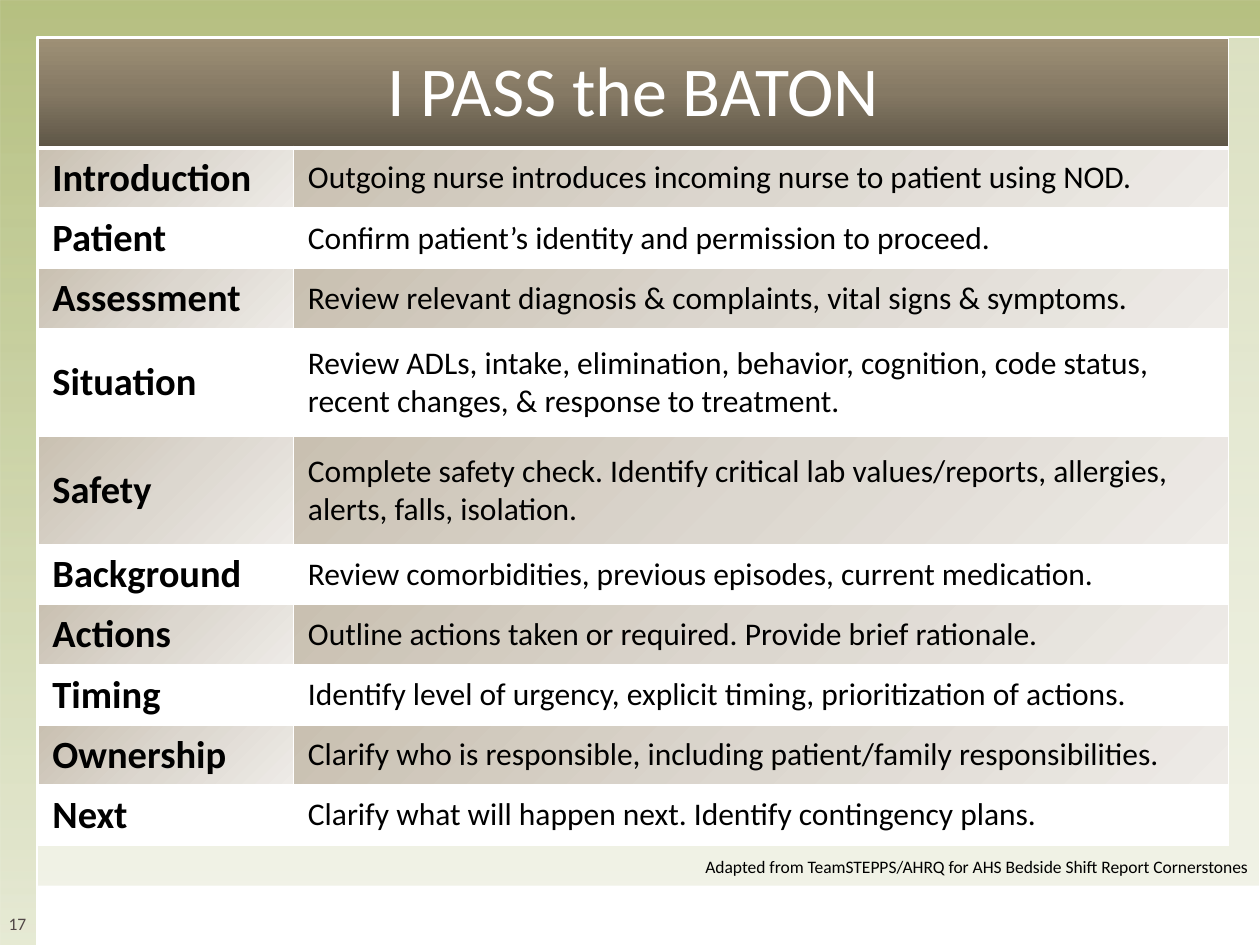
from pptx import Presentation
from pptx.dml.color import RGBColor
from pptx.enum.shapes import MSO_SHAPE
from pptx.enum.text import MSO_ANCHOR, PP_ALIGN
from pptx.oxml import parse_xml
from pptx.oxml.ns import nsdecls, qn
from pptx.util import Pt

FONT = "Calibri"
WHITE = RGBColor(0xFF, 0xFF, 0xFF)
BLACK = RGBColor(0x00, 0x00, 0x00)
GREEN = RGBColor(0x9E, 0xAC, 0x58)
NUMBER_GREY = RGBColor(0x51, 0x47, 0x46)
HEADER_DARK = RGBColor(0x5D, 0x55, 0x46)
HEADER_MIDDLE = RGBColor(0x85, 0x79, 0x64)
HEADER_LIGHT = RGBColor(0x9E, 0x90, 0x76)
BAND_DARK = RGBColor(0xC9, 0xC0, 0xB1)
BAND_MIDDLE = RGBColor(0xDC, 0xD7, 0xCF)
BAND_LIGHT = RGBColor(0xEE, 0xEB, 0xE7)

HEADER_COLORS = [(HEADER_DARK, 100), (HEADER_MIDDLE, 100), (HEADER_LIGHT, 100)]
BAND_COLORS = [(BAND_DARK, 100), (BAND_MIDDLE, 100), (BAND_LIGHT, 100)]
BACKDROP_COLORS = [(GREEN, 75), (GREEN, 50), (GREEN, 25)]

TITLE = "I PASS the BATON"
HEADER_HEIGHT, ONE_LINE, TWO_LINES = 63, 34.4, 61.7
STEPS = [
    ("Introduction", "Outgoing nurse introduces incoming nurse to patient using NOD.", ONE_LINE),
    ("Patient", "Confirm patient’s identity and permission to proceed.", ONE_LINE),
    ("Assessment", "Review relevant diagnosis & complaints, vital signs & symptoms.", ONE_LINE),
    ("Situation", "Review ADLs, intake, elimination, behavior, cognition, code status, "
     "recent changes, & response to treatment.", TWO_LINES),
    ("Safety", "Complete safety check. Identify critical lab values/reports, allergies, "
     "alerts, falls, isolation.", TWO_LINES),
    ("Background", "Review comorbidities, previous episodes, current medication.", ONE_LINE),
    ("Actions", "Outline actions taken or required. Provide brief rationale.", ONE_LINE),
    ("Timing", "Identify level of urgency, explicit timing, prioritization of actions.", ONE_LINE),
    ("Ownership", "Clarify who is responsible, including patient/family responsibilities.", ONE_LINE),
    ("Next", "Clarify what will happen next. Identify contingency plans.", ONE_LINE),
]


def set_gradient(fill, properties, colors, angle):
    """Fill with three evenly spaced colour stops, the angle running clockwise."""
    fill.background()
    stops = "".join(
        f'<a:gs pos="{index * 50000}"><a:srgbClr val="{color}">'
        f'<a:alpha val="{opacity * 1000}"/></a:srgbClr></a:gs>'
        for index, (color, opacity) in enumerate(colors)
    )
    gradient = parse_xml(
        f'<a:gradFill {nsdecls("a")} rotWithShape="1"><a:gsLst>{stops}</a:gsLst>'
        f'<a:lin ang="{angle * 60000}" scaled="0"/></a:gradFill>'
    )
    properties.replace(properties.find(qn("a:noFill")), gradient)


def add_text(text_frame, text, size, color, bold=False, alignment=PP_ALIGN.LEFT):
    """Write one formatted run into the first paragraph."""
    paragraph = text_frame.paragraphs[0]
    paragraph.alignment = alignment
    run = paragraph.add_run()
    run.text = text
    run.font.name = FONT
    run.font.size = Pt(size)
    run.font.bold = bold
    run.font.color.rgb = color


def add_rectangle(slide, left, top, width, height):
    """Add a white rectangle without line or shadow."""
    shape = slide.shapes.add_shape(
        MSO_SHAPE.RECTANGLE, Pt(left), Pt(top), Pt(width), Pt(height))
    shape.shadow.inherit = False
    shape.fill.solid()
    shape.fill.fore_color.rgb = WHITE
    shape.line.fill.background()
    return shape


def add_backdrop(slide, width, height):
    """Draw the green gradient, the pale panel and the white footer strip."""
    margin, footer_height = 21, 34
    backdrop = add_rectangle(slide, 0, 0, width, height)
    set_gradient(backdrop.fill, backdrop.element.spPr, BACKDROP_COLORS, 90)

    panel = add_rectangle(slide, margin, margin, width - margin, height - margin)
    color = panel.element.spPr.find(qn("a:solidFill"))[0]
    color.append(parse_xml(f'<a:alpha {nsdecls("a")} val="50000"/>'))
    panel.line.color.rgb = WHITE
    panel.line.width = Pt(1)

    add_rectangle(slide, margin, height - footer_height, width - margin, footer_height)


def add_label(slide, box, text, size, color, alignment, anchor, margins):
    """Add a wrapped text box with the given left, top, right and bottom margins."""
    label = slide.shapes.add_textbox(*map(Pt, box))
    frame = label.text_frame
    frame.word_wrap = True
    frame.vertical_anchor = anchor
    (frame.margin_left, frame.margin_top,
     frame.margin_right, frame.margin_bottom) = map(Pt, margins)
    add_text(frame, text, size, color, alignment=alignment)


def style_cell(cell, colors, angle, bottom_width=1):
    """Set margins, white borders and a gradient or white fill."""
    cell.vertical_anchor = MSO_ANCHOR.MIDDLE
    cell.margin_left = cell.margin_right = Pt(8.4)
    cell.margin_top = cell.margin_bottom = Pt(0)
    cell.fill.solid()
    cell.fill.fore_color.rgb = WHITE
    properties = cell._tc.get_or_add_tcPr()
    if colors:
        set_gradient(cell.fill, properties, colors, angle)
    borders = [("lnL", 1), ("lnR", 1), ("lnT", 1), ("lnB", bottom_width)]
    for index, (side, width) in enumerate(borders):
        properties.insert(index, parse_xml(
            f'<a:{side} {nsdecls("a")} w="{Pt(width)}"><a:solidFill>'
            f'<a:srgbClr val="{WHITE}"/></a:solidFill></a:{side}>'))


def add_handover_table(slide, left, top, width):
    """Add the table with a merged title row and one banded row for each step."""
    heights = [HEADER_HEIGHT] + [height for _, _, height in STEPS]
    table = slide.shapes.add_table(
        len(heights), 2, Pt(left), Pt(top), Pt(width), Pt(sum(heights))).table
    name_width = 146
    table.columns[0].width = Pt(name_width)
    table.columns[1].width = Pt(width - name_width)
    for row, height in zip(table.rows, heights):
        row.height = Pt(height)

    header = table.cell(0, 0)
    header.merge(table.cell(0, 1))
    for cell in table.rows[0].cells:
        style_cell(cell, HEADER_COLORS, 270, bottom_width=3)
    add_text(header.text_frame, TITLE, 40, WHITE, alignment=PP_ALIGN.CENTER)

    for index, (name, description, _) in enumerate(STEPS, start=1):
        name_cell, description_cell = table.rows[index].cells
        for cell in (name_cell, description_cell):
            style_cell(cell, BAND_COLORS if index % 2 else None, 45)
        add_text(name_cell.text_frame, name, 22, BLACK, bold=True)
        add_text(description_cell.text_frame, description, 18, BLACK)


def main():
    """Build the handover slide and save it."""
    presentation = Presentation()
    presentation.slide_width, presentation.slide_height = Pt(720), Pt(540)
    slide = presentation.slides.add_slide(presentation.slide_layouts[6])
    add_backdrop(slide, 720, 540)
    add_label(slide, (0, 506, 20, 34), "17", 10, NUMBER_GREY,
              PP_ALIGN.CENTER, MSO_ANCHOR.BOTTOM, (0, 3, 0, 6))
    add_handover_table(slide, 21.6, 21.6, 680.4)
    add_label(slide, (0, 485.3, 720, 19.4),
              "Adapted from TeamSTEPPS/AHRQ for AHS Bedside Shift Report Cornerstones",
              10, BLACK, PP_ALIGN.RIGHT, MSO_ANCHOR.MIDDLE, (7.2, 3.6, 7.2, 3.6))
    presentation.save("out.pptx")


if __name__ == "__main__":
    main()
